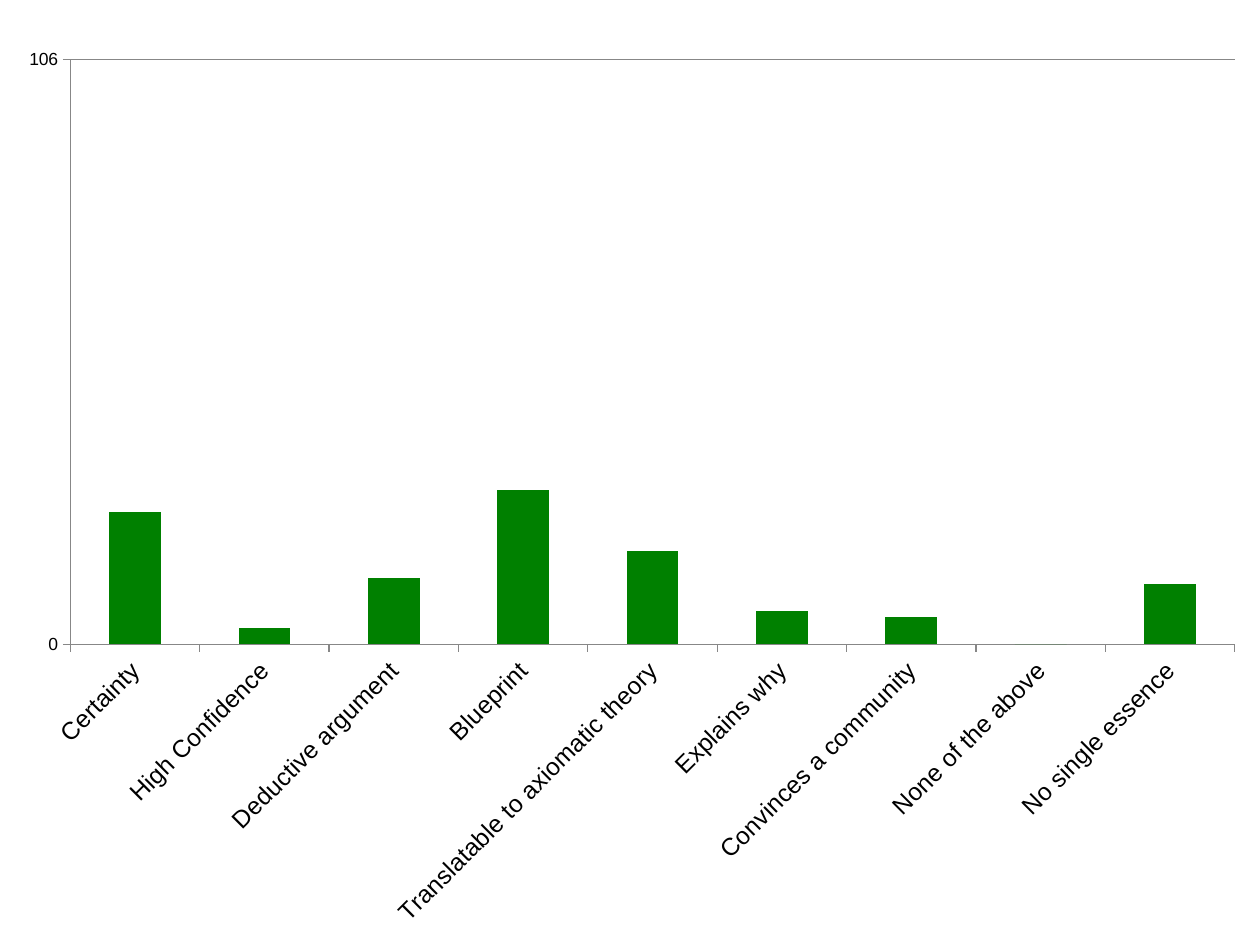
from lxml.etree import SubElement
from pptx import Presentation
from pptx.chart.data import CategoryChartData
from pptx.dml.color import RGBColor
from pptx.enum.chart import XL_CHART_TYPE, XL_TICK_MARK
from pptx.oxml.ns import qn
from pptx.util import Inches, Pt

ANSWERS = {
    "Certainty": 24,
    "High Confidence": 3,
    "Deductive argument": 12,
    "Blueprint": 28,
    "Translatable to axiomatic theory": 17,
    "Explains why": 6,
    "Convinces a community": 5,
    "None of the above": 0,
    "No single essence": 11,
}
RESPONDENTS = 106
GREEN, GREY, BLACK = "008000", "878787", "000000"


def color(value):
    return RGBColor.from_string(value)


def set_font(font, size):
    font.name = "Arial"
    font.size = Pt(size)
    font.bold = False
    font.color.rgb = color(BLACK)


def set_line(line):
    line.color.rgb = color(GREY)
    line.width = Pt(0.75)


def set_axis(axis, size):
    set_font(axis.tick_labels.font, size)
    set_line(axis.format.line)
    axis.major_tick_mark = XL_TICK_MARK.OUTSIDE
    axis.minor_tick_mark = XL_TICK_MARK.NONE


def place_plot(chart, **shares):
    area = chart.element.find(".//" + qn("c:plotArea"))
    for old in area.findall(qn("c:layout")):
        area.remove(old)
    layout = SubElement(area, qn("c:layout"))
    area.insert(0, layout)
    manual = SubElement(layout, qn("c:manualLayout"))
    settings = {"layoutTarget": "inner", "xMode": "edge", "yMode": "edge", **shares}
    for name, value in settings.items():
        SubElement(manual, qn("c:" + name)).set("val", str(value))


def add_answer_chart(s, x, y, w, h):
    data = CategoryChartData()
    data.categories = list(ANSWERS)
    data.add_series("Series 1", list(ANSWERS.values()))
    chart = s.shapes.add_chart(
        XL_CHART_TYPE.COLUMN_CLUSTERED, x, y, w, h, data
    ).chart
    chart.has_legend = False
    chart.has_title = False
    set_font(chart.font, 10)
    place_plot(chart, x=0.053, y=0.031, w=0.927, h=0.64)

    plot = chart.plots[0]
    plot.gap_width = 150
    plot.vary_by_categories = False
    bars = plot.series[0]
    bars.invert_if_negative = False
    bars.format.fill.solid()
    bars.format.fill.fore_color.rgb = color(GREEN)

    answers, counts = chart.category_axis, chart.value_axis
    set_axis(answers, 14)
    set_axis(counts, 10)
    body = answers._element.find(qn("c:txPr")).find(qn("a:bodyPr"))
    body.set("rot", str(-45 * 60000))
    body.set("vert", "horz")
    counts.minimum_scale = 0
    counts.maximum_scale = counts.major_unit = RESPONDENTS
    counts.has_major_gridlines = True
    set_line(counts.major_gridlines.format.line)


def main():
    prs = Presentation()
    prs.slide_width, prs.slide_height = Inches(10), Inches(7.5)
    s = prs.slides.add_slide(prs.slide_layouts[6])
    left, top = Inches(0.03), Inches(0.25)
    add_answer_chart(s, left, top, prs.slide_width - left, prs.slide_height - top)
    prs.save("out.pptx")


if __name__ == "__main__":
    main()
